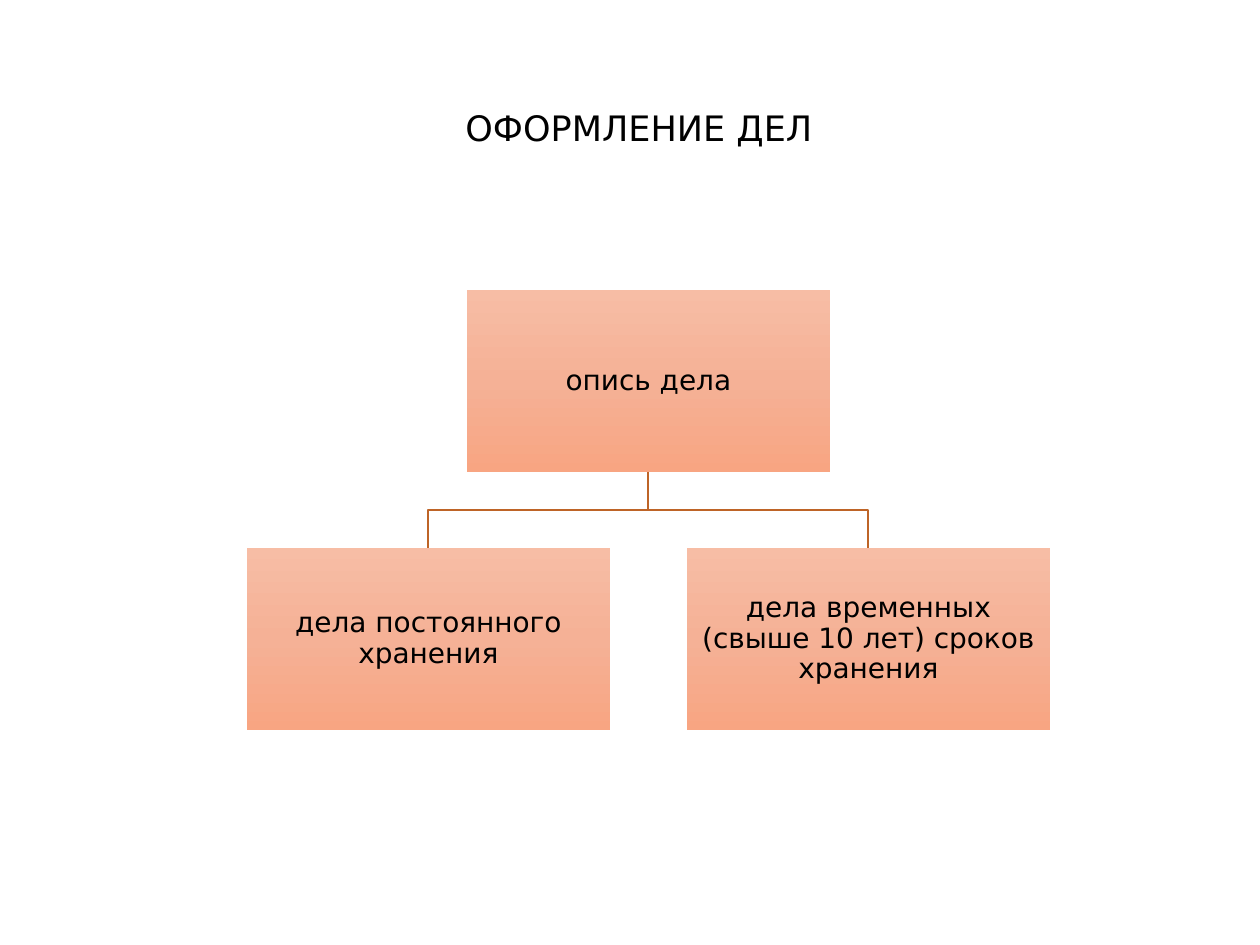
from copy import deepcopy

from pptx import Presentation
from pptx import util as u
from pptx.dml.color import RGBColor
from pptx.enum import shapes, text

PX = u.Inches(1) / 126
BLACK = RGBColor(0x00, 0x00, 0x00)
BROWN = RGBColor(0xBE, 0x64, 0x27)
PEACH = (RGBColor(0xF7, 0xBD, 0xA5), RGBColor(0xF5, 0xB1, 0x96), RGBColor(0xF8, 0xA5, 0x82))

BOX_W, BOX_H = 363, 182
ROOT_X, ROOT_Y = 467, 290
CHILD_Y, CHILD_SHIFT = 548, 220


def px(*values):
    return [u.Emu(round(v * PX)) for v in values]


class SlideBuilder:
    font_name = "DejaVu Sans"

    def __init__(self, slide):
        self.s = slide

    def label(self, sp, content, size, inset=None):
        tf = sp.text_frame
        tf.text = content
        frame = {"word_wrap": True, "auto_size": text.MSO_AUTO_SIZE.NONE,
                 "vertical_anchor": text.MSO_ANCHOR.MIDDLE}
        if inset is not None:
            for side in ("left", "top", "right", "bottom"):
                frame["margin_" + side] = px(inset)[0]
        for name, value in frame.items():
            setattr(tf, name, value)
        p = tf.paragraphs[0]
        for name, value in {"alignment": text.PP_ALIGN.CENTER, "line_spacing": 0.9}.items():
            setattr(p, name, value)
        r = p.runs[0]
        for name, value in {"name": self.font_name, "size": u.Pt(size)}.items():
            setattr(r.font, name, value)
        r.font.color.rgb = BLACK

    def title(self, content, x, y, w, h):
        sp = self.s.shapes.title
        sp.left, sp.top, sp.width, sp.height = px(x, y, w, h)
        self.label(sp, content, 20)

    def box(self, content, x, y):
        sp = self.s.shapes.add_shape(shapes.MSO_SHAPE.RECTANGLE, *px(x, y, BOX_W, BOX_H))
        sp.shadow.inherit = False
        sp.line.fill.background()
        self.shade(sp)
        self.label(sp, content, 16, inset=1)

    def shade(self, sp):
        """Fill with the three-stop gradient, running from top to bottom."""
        sp.fill.gradient()
        sp.fill.gradient_angle = 270
        first = sp._element.spPr.xpath("./a:gradFill/a:gsLst/a:gs")[0]
        first.addnext(deepcopy(first))
        for stop, position, color in zip(sp.fill.gradient_stops, (0, 0.5, 1), PEACH):
            stop.position = position
            stop.color.rgb = color

    def branch(self, x1, y1, x2, y2):
        """Draw a bent line that turns halfway between the two levels."""
        middle = (y1 + y2) // 2
        fb = self.s.shapes.build_freeform(x1, y1, scale=PX)
        fb.add_line_segments([(x1, middle), (x2, middle), (x2, y2)], close=False)
        sp = fb.convert_to_shape()
        sp.shadow.inherit = False
        sp.fill.background()
        sp.line.color.rgb = BROWN
        sp.line.width = u.Pt(1)


def main():
    prs = Presentation()
    prs.slide_width, prs.slide_height = u.Inches(10), u.Inches(7.5)
    b = SlideBuilder(prs.slides.add_slide(prs.slide_layouts[5]))

    b.title("ОФОРМЛЕНИЕ ДЕЛ ", 365, 86, 559, 89)
    children = {"дела постоянного хранения": ROOT_X - CHILD_SHIFT,
                "дела временных (свыше 10 лет) сроков хранения": ROOT_X + CHILD_SHIFT}
    half = BOX_W // 2
    for x in children.values():
        b.branch(ROOT_X + half, ROOT_Y + BOX_H, x + half, CHILD_Y)
    b.box("опись дела", ROOT_X, ROOT_Y)
    for content, x in children.items():
        b.box(content, x, CHILD_Y)

    prs.save("out.pptx")


if __name__ == "__main__":
    main()
